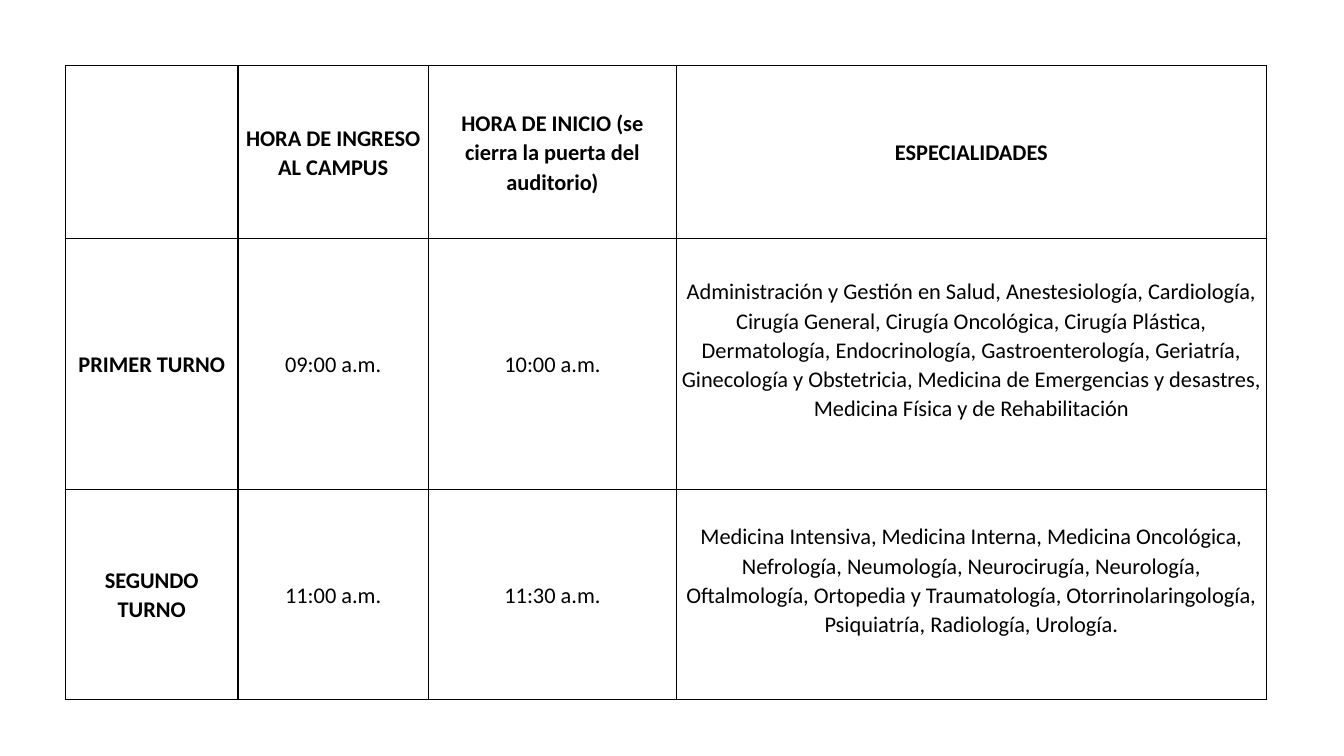
"""Build a slide with the timetable of shifts and medical specialties."""
import pptx
import pptx.dml.color
import pptx.enum.text
import pptx.oxml
import pptx.oxml.ns
import pptx.util

BLACK = pptx.dml.color.RGBColor(0, 0, 0)
FONT = "Calibri"
SLIDE_SIZE = (13.33, 7.5)
TABLE_CORNER = (0.65, 0.65)
COLUMN_WIDTHS = (1.71, 1.89, 2.46, 5.85)
ROW_HEIGHTS = (1.72, 2.49, 2.08)
SIDE_MARGIN = 0.05
LIST_BOTTOM_MARGIN = 0.29
TIMETABLE = (
    (
        "",
        "HORA DE INGRESO AL CAMPUS",
        "HORA DE INICIO (se cierra la puerta del auditorio)",
        "ESPECIALIDADES",
    ),
    (
        "PRIMER TURNO",
        "09:00 a.m.",
        "10:00 a.m.",
        "Administración y Gestión en Salud, Anestesiología, Cardiología, "
        "Cirugía General, Cirugía Oncológica, Cirugía Plástica, Dermatología, "
        "Endocrinología, Gastroenterología, Geriatría, Ginecología y Obstetricia, "
        "Medicina de Emergencias y desastres, Medicina Física y de Rehabilitación",
    ),
    (
        "SEGUNDO TURNO",
        "11:00 a.m.",
        "11:30 a.m.",
        "Medicina Intensiva, Medicina Interna, Medicina Oncológica, Nefrología, "
        "Neumología, Neurocirugía, Neurología, Oftalmología, Ortopedia y "
        "Traumatología, Otorrinolaringología, Psiquiatría, Radiología, Urología.",
    ),
)


def add_borders(cell):
    """Draw a thin black line on every side of a cell."""
    properties = cell._tc.get_or_add_tcPr()
    namespace = pptx.oxml.ns.nsdecls("a")
    for side in ("lnL", "lnR", "lnT", "lnB"):
        properties.append(pptx.oxml.parse_xml(
            f'<a:{side} {namespace} w="{pptx.util.Pt(1)}"><a:solidFill>'
            f'<a:srgbClr val="{BLACK}"/></a:solidFill></a:{side}>'
        ))


def fill_cell(cell, text, bold, bottom_margin):
    """Write centred text into a bordered cell without a fill."""
    add_borders(cell)
    cell.fill.background()
    cell.vertical_anchor = pptx.enum.text.MSO_ANCHOR.MIDDLE
    cell.margin_left = cell.margin_right = pptx.util.Inches(SIDE_MARGIN)
    cell.margin_top = 0
    cell.margin_bottom = pptx.util.Inches(bottom_margin)
    cell.text = text
    para = cell.text_frame.paragraphs[0]
    para.alignment = pptx.enum.text.PP_ALIGN.CENTER
    para.line_spacing = 1.07
    para.font.name = FONT
    para.font.size = pptx.util.Pt(16)
    para.font.bold = bold
    para.font.color.rgb = BLACK


def add_timetable(page):
    """Add the timetable with its column widths and row heights."""
    left, top, width, height = map(
        pptx.util.Inches, (*TABLE_CORNER, sum(COLUMN_WIDTHS), sum(ROW_HEIGHTS))
    )
    table = page.shapes.add_table(
        len(ROW_HEIGHTS), len(COLUMN_WIDTHS), left, top, width, height
    ).table
    table.first_row = table.horz_banding = False
    for column, column_width in zip(table.columns, COLUMN_WIDTHS):
        column.width = pptx.util.Inches(column_width)
    for row, row_height in zip(table.rows, ROW_HEIGHTS):
        row.height = pptx.util.Inches(row_height)
    last_column = len(COLUMN_WIDTHS) - 1
    for row_index, texts in enumerate(TIMETABLE):
        for column_index, text in enumerate(texts):
            heading = row_index == 0 or column_index == 0
            is_list = not heading and column_index == last_column
            fill_cell(
                table.cell(row_index, column_index), text, heading,
                LIST_BOTTOM_MARGIN if is_list else 0,
            )


def main():
    """Create the deck and save it."""
    deck = pptx.Presentation()
    deck.slide_width, deck.slide_height = map(pptx.util.Inches, SLIDE_SIZE)
    page = deck.slides.add_slide(deck.slide_layouts[6])
    add_timetable(page)
    deck.save("out.pptx")


if __name__ == "__main__":
    main()
